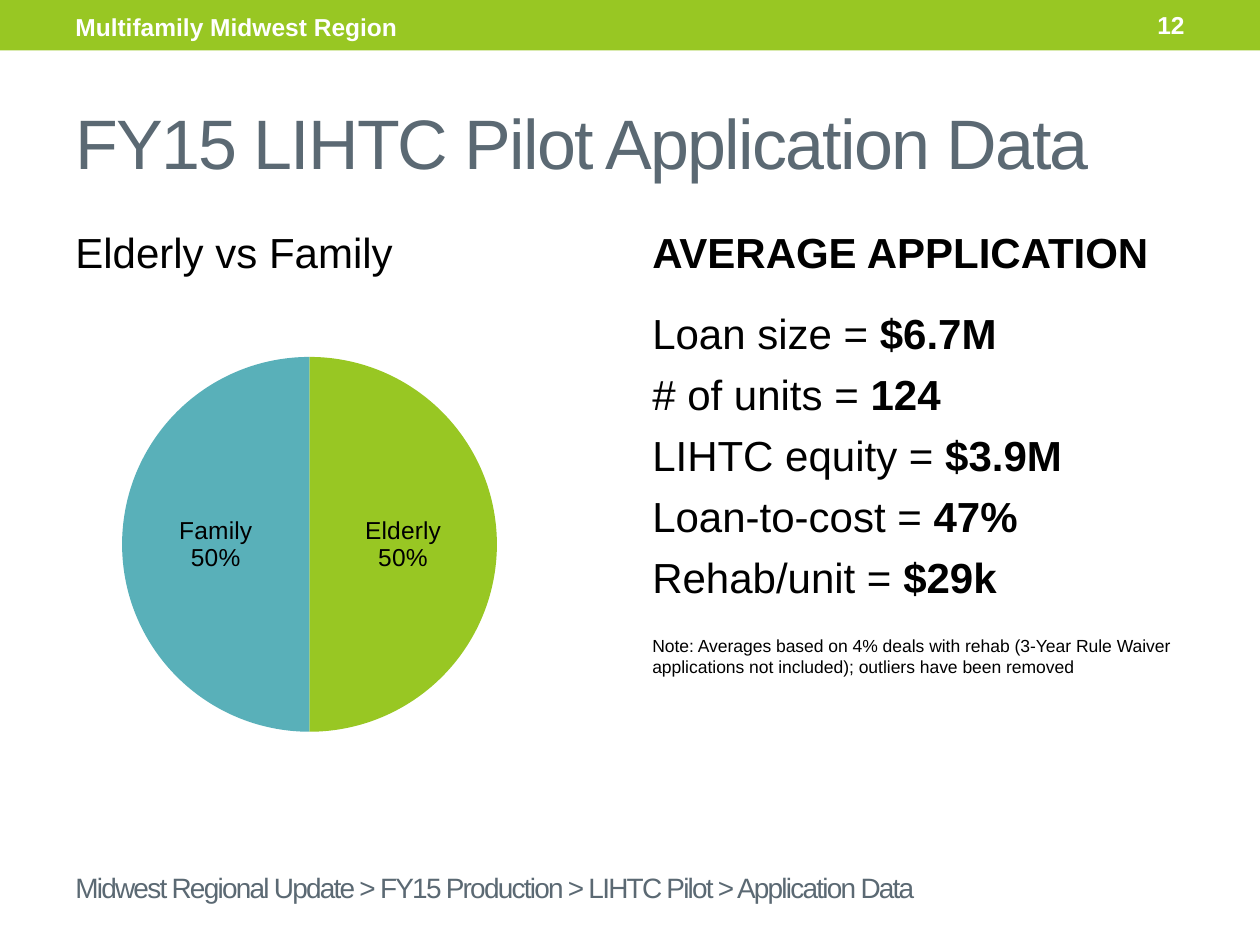
from lxml import etree
from pptx import Presentation
from pptx.chart.data import CategoryChartData
from pptx.dml.color import RGBColor
from pptx.enum.chart import XL_CHART_TYPE as ChartType, XL_LABEL_POSITION as LabelPosition
from pptx.enum.shapes import MSO_SHAPE as Shape
from pptx.enum.text import MSO_ANCHOR as Anchor, PP_ALIGN as Align
from pptx.oxml.ns import qn
from pptx.util import Cm, Pt

FONT = "Arial"
COLORS = {
    "green": "98C723",
    "teal": "59B0B9",
    "slate": "5B6973",
    "black": "000000",
    "white": "FFFFFF",
}


def color(name):
    return RGBColor.from_string(COLORS[name])


def fill_text(box, paragraphs, color_name, anchor=Anchor.TOP, align=Align.LEFT, tracking=0):
    """Each paragraph is (size, space before, [(text, bold), ...])."""
    frame = box.text_frame
    frame.word_wrap = True
    frame.vertical_anchor = anchor
    for index, (size, space, spans) in enumerate(paragraphs):
        para = frame.add_paragraph() if index else frame.paragraphs[0]
        para.alignment = align
        para.space_before = Pt(space)
        for text, bold in spans:
            span = para.add_run()
            span.text = text
            span.font.name = FONT
            span.font.size = Pt(size)
            span.font.bold = bold
            span.font.color.rgb = color(color_name)
            if tracking:
                span.font._element.set("spc", str(tracking * 100))


deck = Presentation()
deck.slide_width, deck.slide_height = Cm(25.4), Cm(19.05)
page = deck.slides.add_slide(deck.slide_layouts[5])
shapes = page.shapes

# Header band
band = shapes.add_shape(Shape.RECTANGLE, 0, 0, deck.slide_width, Cm(1.02))
band.shadow.inherit = False
band.fill.solid()
band.fill.fore_color.rgb = color("green")
band.line.fill.background()

region = shapes.add_textbox(Cm(1.27), Cm(0.08), Cm(11.43), Cm(0.91))
fill_text(region, [(14, 0, [("Multifamily Midwest Region", True)])], "white", Anchor.MIDDLE)
number = shapes.add_textbox(Cm(21.17), Cm(0.05), Cm(2.96), Cm(0.91))
fill_text(number, [(14, 0, [("12", True)])], "white", Anchor.MIDDLE, Align.RIGHT)

# Title
title = shapes.title
title.left, title.top, title.width, title.height = Cm(1.27), Cm(1.48), Cm(22.86), Cm(2.75)
fill_text(title, [(40, 0, [("FY15 LIHTC Pilot Application Data", False)])],
          "slate", Anchor.MIDDLE, tracking=-1)

# Left column: heading and pie chart
heading = shapes.add_textbox(Cm(1.27), Cm(4.45), Cm(10.8), Cm(1.4))
fill_text(heading, [(24, 2.5, [("Elderly vs Family", False)])], "black")

data = CategoryChartData()
data.categories = ["Elderly", "Family"]
data.add_series("Series 1", [50, 50])
chart = shapes.add_chart(ChartType.PIE, Cm(0.42), Cm(4.88), Cm(11.64), Cm(12.19), data).chart
chart.has_legend = False
chart.has_title = False
chart.font.name = FONT
chart.font.size = Pt(18)
chart.font.color.rgb = color("black")

plot = chart.plots[0]
plot.vary_by_categories = True
for index, name in enumerate(["green", "teal"]):
    point = plot.series[0].points[index]
    point.format.fill.solid()
    point.format.fill.fore_color.rgb = color(name)
    point.format.line.fill.background()

plot.has_data_labels = True
labels = plot.data_labels
labels.show_category_name = True
labels.show_percentage = True
labels.show_value = False
labels.number_format = "0%"
labels.number_format_is_linked = False
labels.position = LabelPosition.CENTER
labels.font.name = FONT
labels.font.size = Pt(14)
labels.font.color.rgb = color("black")

# Fixed plot area inside the chart frame
plot_area = chart._chartSpace.find(".//" + qn("c:plotArea"))
layout = plot_area.find(qn("c:layout"))
if layout is None:
    layout = etree.Element(qn("c:layout"))
    plot_area.insert(0, layout)
manual = etree.SubElement(layout, qn("c:manualLayout"))
for tag, value in [("layoutTarget", "inner"), ("xMode", "edge"), ("yMode", "edge"),
                   ("x", "0.17"), ("y", "0.19"), ("w", "0.66"), ("h", "0.62")]:
    etree.SubElement(manual, qn("c:" + tag)).set("val", value)

# Right column: average application
averages = [
    ("Loan size = ", "$6.7M"),
    ("# of units = ", "124"),
    ("LIHTC equity = ", "$3.9M"),
    ("Loan-to-cost = ", "47%"),
    ("Rehab/unit = ", "$29k"),
]
note = ("Note: Averages based on 4% deals with rehab (3-Year Rule Waiver "
        "applications not included); outliers have been removed")
lines = [(24, 2.5, [("AVERAGE APPLICATION", True)])]
for index, (label, value) in enumerate(averages):
    lines.append((24, 6 if index else 17.5, [(label, False), (value, True)]))
lines.append((10, 19, [(note, False)]))
summary = shapes.add_textbox(Cm(12.9), Cm(4.45), Cm(12.07), Cm(14.17))
fill_text(summary, lines, "black")

# Breadcrumb
trail = shapes.add_textbox(Cm(1.27), Cm(17.35), Cm(22.86), Cm(1.07))
crumbs = "Midwest Regional Update > FY15 Production > LIHTC Pilot > Application Data"
fill_text(trail, [(16, 0, [(crumbs, False)])], "slate", Anchor.MIDDLE, tracking=-1)

deck.save("out.pptx")
